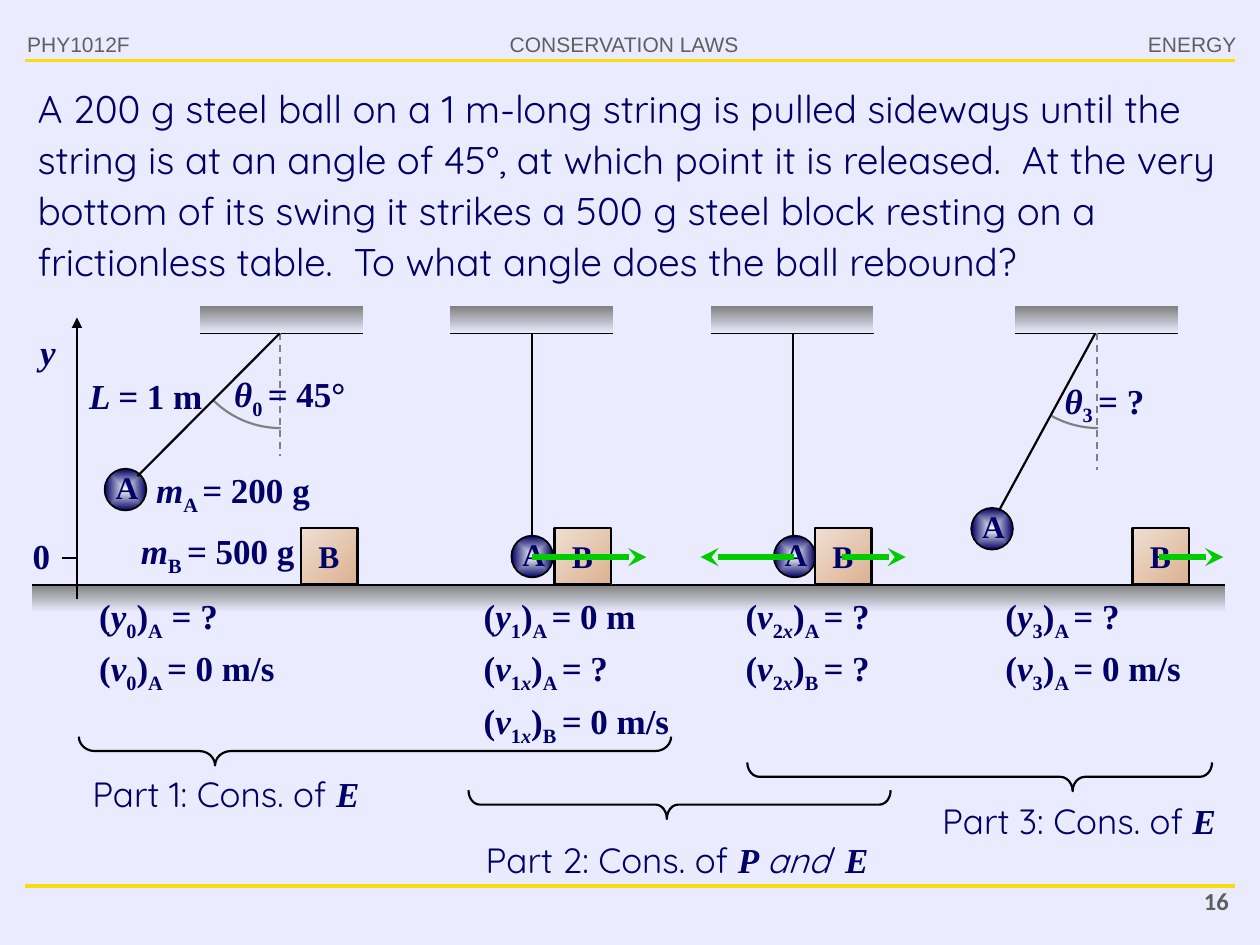
from math import cos, radians, sin

from lxml.etree import SubElement
from pptx import Presentation
from pptx.dml.color import RGBColor
from pptx.enum.dml import MSO_LINE as Dash
from pptx.enum.shapes import MSO_CONNECTOR as Link, MSO_SHAPE as Form
from pptx.enum.text import PP_ALIGN as Align
from pptx.oxml.ns import qn
from pptx.util import Cm, Pt

NAVY = RGBColor(0x00, 0x00, 0x66)
BLACK = RGBColor(0x00, 0x00, 0x00)
WHITE = RGBColor(0xFF, 0xFF, 0xFF)
PALE = RGBColor(0xEB, 0xEB, 0xFF)
GREY = RGBColor(0x80, 0x80, 0x80)
SLATE = RGBColor(0x5F, 0x5F, 0x5F)
GOLD = RGBColor(0xF8, 0xDC, 0x0E)
GREEN = RGBColor(0x00, 0xCC, 0x00)
SAND = RGBColor(0xF0, 0xDF, 0xD2)
CLAY = RGBColor(0xDB, 0xB1, 0x91)
TIMES, SANS, HAND, NUM = "Times New Roman", "Arial", "Quicksand", "Calibri"
MARKS = "*_~#^"

deck = Presentation()
deck.slide_width, deck.slide_height = Cm(25.4), Cm(19.05)
slide = deck.slides.add_slide(deck.slide_layouts[6])
slide.background.fill.solid()
slide.background.fill.fore_color.rgb = PALE
shapes = slide.shapes


def put(x, y, w, h, text, face=TIMES, size=20, tint=NAVY, side=Align.LEFT, left=0, lead=1.1, wrap=True):
    frame = shapes.add_textbox(Cm(x), Cm(y), Cm(w), Cm(h)).text_frame
    frame.word_wrap = wrap
    frame.text = text
    for para in frame.paragraphs:
        parts = para.text.split("|")
        para.text = ""
        para.alignment = side
        para.line_spacing = lead
        para._p.get_or_add_pPr().set("marL", str(Cm(left)))
        for part in parts:
            mark = part[0]
            run = para.add_run()
            run.text = part.lstrip(MARKS)
            font = run.font
            font.name = TIMES if mark == "#" else face
            font.size = Pt(26 if mark == "^" else size)
            font.bold = font.name in (TIMES, NUM)
            font.italic = mark in "*~#^"
            font.color.rgb = tint
            if mark in "_~^":
                run._r.get_or_add_rPr().set("baseline", "30000" if mark == "^" else "-25000")


def rule(x1, y1, x2, y2, tint=BLACK, width=1.25, head=None, dash=None):
    link = shapes.add_connector(Link.STRAIGHT, Cm(x1), Cm(y1), Cm(x2), Cm(y2))
    link.line.color.rgb = tint
    link.line.width = Pt(width)
    if dash:
        link.line.dash_style = dash
    if head:
        SubElement(link.line._get_or_add_ln(), qn("a:tailEnd"), {"type": head})
    SubElement(link._element.spPr, qn("a:effectLst"))


for y in (1.22, 17.86):
    rule(0.51, y, 24.89, y, GOLD, 1.75)
for x, y, w, text, face, size, side, wrap in (
    (9.98, 0.51, 5.21, "CONSERVATION LAWS", SANS, 12, Align.CENTER, False),
    (22.89, 0.51, 2.29, "ENERGY", SANS, 12, Align.RIGHT, False),
    (0.3, 0.51, 3, "PHY1012F", SANS, 12, Align.LEFT, True),
    (22.4, 17.73, 2.62, "16", NUM, 14, Align.RIGHT, True),
):
    put(x, y, w, 0.8, text, face, size, SLATE, side, lead=1, wrap=wrap)

put(0.51, 1.5, 24.38, 4.34,
    "A 200 g steel ball on a 1 m-long string is pulled sideways until the string is at an angle of 45°, "
    "at which point it is released.  At the very bottom of its swing it strikes a 500 g steel block "
    "resting on a frictionless table.  To what angle does the ball rebound?", HAND, 22)

for x, y, w in ((4.04, 6.17, 3.28), (9.07, 6.17, 3.28), (14.33, 6.17, 3.28), (20.47, 6.17, 3.28), (0.64, 11.79, 24.05)):
    slab = shapes.add_shape(Form.RECTANGLE, Cm(x), Cm(y), Cm(w), Cm(0.55))
    slab.shadow.inherit = False
    slab.line.fill.background()
    slab.fill.gradient()
    slab.fill.gradient_angle = 270
    for stop, tint, at in zip(slab.fill.gradient_stops, (GREY, PALE), (0, 1)):
        stop.color.rgb, stop.position = tint, at
    edge = 11.79 if y > 10 else 6.72
    rule(x, edge, x + w, edge, width=0.75)

rule(1.55, 12.07, 1.55, 6.4, head="triangle")
rule(1.24, 11.25, 1.57, 11.25)

for x, low, turn in ((5.64, 9.19, 135), (22.12, 9.47, 119)):
    rule(x, 6.71, x, low, GREY, 1, dash=Dash.DASH)
    dots = [(Cm(x + 0.02 + 1.93 * cos(radians(a))), Cm(6.7 + 1.93 * sin(radians(a))))
            for a in range(turn, 89, -1)]
    pen = shapes.build_freeform(*dots[0])
    pen.add_line_segments(dots[1:], close=False)
    arc = pen.convert_to_shape()
    arc.shadow.inherit = False
    arc.fill.background()
    arc.line.color.rgb = GREY
    arc.line.width = Pt(1.25)

for top, ball, end, box in (
    (5.64, (2.11, 9.45), (2.77, 9.6), 6.07),
    (10.72, (10.31, 10.8), (10.72, 10.8), 11.18),
    (15.98, (15.6, 10.8), (15.98, 10.8), 16.43),
    (22.08, (19.58, 10.24), (20.14, 10.29), 22.83),
):
    for form, x, y, side, pair, width, name, dx, dy in (
        (Form.OVAL, *ball, 0.84, (WHITE, NAVY), 1, "A", -0.03, -0.22),
        (Form.RECTANGLE, box, 10.64, 1.14, (SAND, CLAY), 1.25, "B", 0.1, -0.02),
    ):
        body = shapes.add_shape(form, Cm(x), Cm(y), Cm(side), Cm(side))
        body.shadow.inherit = False
        body.line.color.rgb = BLACK
        body.line.width = Pt(width)
        body.fill.gradient()
        body.fill.gradient_angle = 315
        for stop, tint, at in zip(body.fill.gradient_stops, pair, (0, 1)):
            stop.color.rgb, stop.position = tint, at
        if form == Form.OVAL:
            grad = body._element.spPr.find(qn("a:gradFill"))
            grad.remove(grad.find(qn("a:lin")))
            glow = SubElement(grad, qn("a:path"), {"path": "shape"})
            SubElement(glow, qn("a:fillToRect"), dict.fromkeys("ltrb", "50000"))
        put(x + dx, y + dy, 0.94, 1.09, name, size=18, wrap=False)
    rule(top, 6.72, *end)

for x1, x2 in ((10.72, 13.03), (16, 14.12), (16.97, 18.26), (23.37, 24.66)):
    rule(x1, 11.23, x2, 11.23, GREEN, 3.5, "stealth")

for x, y, w, h, text in (
    (0.05, 6.45, 1.5, 1.19, "*y"),
    (-0.1, 10.57, 1.68, 1.19, "0"),
    (3.96, 7.29, 3.45, 1.19, "*θ|_0 |*= |45°"),
    (20.7, 7.42, 3.45, 1.19, "*θ|_3 |*= |?"),
    (1.04, 7.34, 3.45, 1.19, "*L = |1 m"),
    (2.39, 9.22, 4.29, 1.19, "*m|_A |*= |200 g"),
    (2.08, 10.46, 4.29, 1.19, "*m|_B |*= |500 g"),
    (1.24, 11.76, 4.85, 2.11, "(|*y|_0|)|_A| = ?\n(|*v|_0|)|_A |*= |0 m/s"),
    (8.99, 11.76, 4.85, 3.05, "(|*y|_1|)|_A |*= |0 m\n(|*v|_1|~x|)|_A |*= |?\n(|*v|_1|~x|)|_B |*= |0 m/s"),
    (14.27, 11.76, 4.85, 2.11, "(|*v|_2|~x|)|_A |*= |?\n(|*v|_2|~x|)|_B |*= |?"),
    (19.51, 11.76, 4.85, 2.11, "(|*y|_3|)|_A |*= |?\n(|*v|_3|)|_A |*= |0 m/s"),
):
    put(x, y, w, h, text, left=0.51)

for mid, y, span, curl, tip in (
    (7.56, 15.14, 11.94, 0.55, 0.23),
    (13.7, 16.22, 8.51, 0.39, 0.47),
    (19.75, 15.66, 9.37, 0.43, 0.7),
):
    brace = shapes.add_shape(Form.LEFT_BRACE, Cm(mid - 0.29), Cm(y - span / 2), Cm(0.58), Cm(span))
    brace.rotation = 270
    brace.adjustments[0], brace.adjustments[1] = curl, tip
    brace.shadow.inherit = False
    brace.fill.background()
    brace.line.color.rgb = BLACK
    brace.line.width = Pt(1.25)

for x, y, w, text in (
    (1.09, 15.37, 6.93, "Part 1: Cons. of |#E"),
    (9.09, 16.46, 9.12, "Part 2: Cons. of |#P |*and|^ |# E"),
    (18.29, 15.9, 6.93, "Part 3: Cons. of |#E"),
):
    put(x, y, w, 1.19, text, HAND, side=Align.CENTER)

deck.save("out.pptx")
